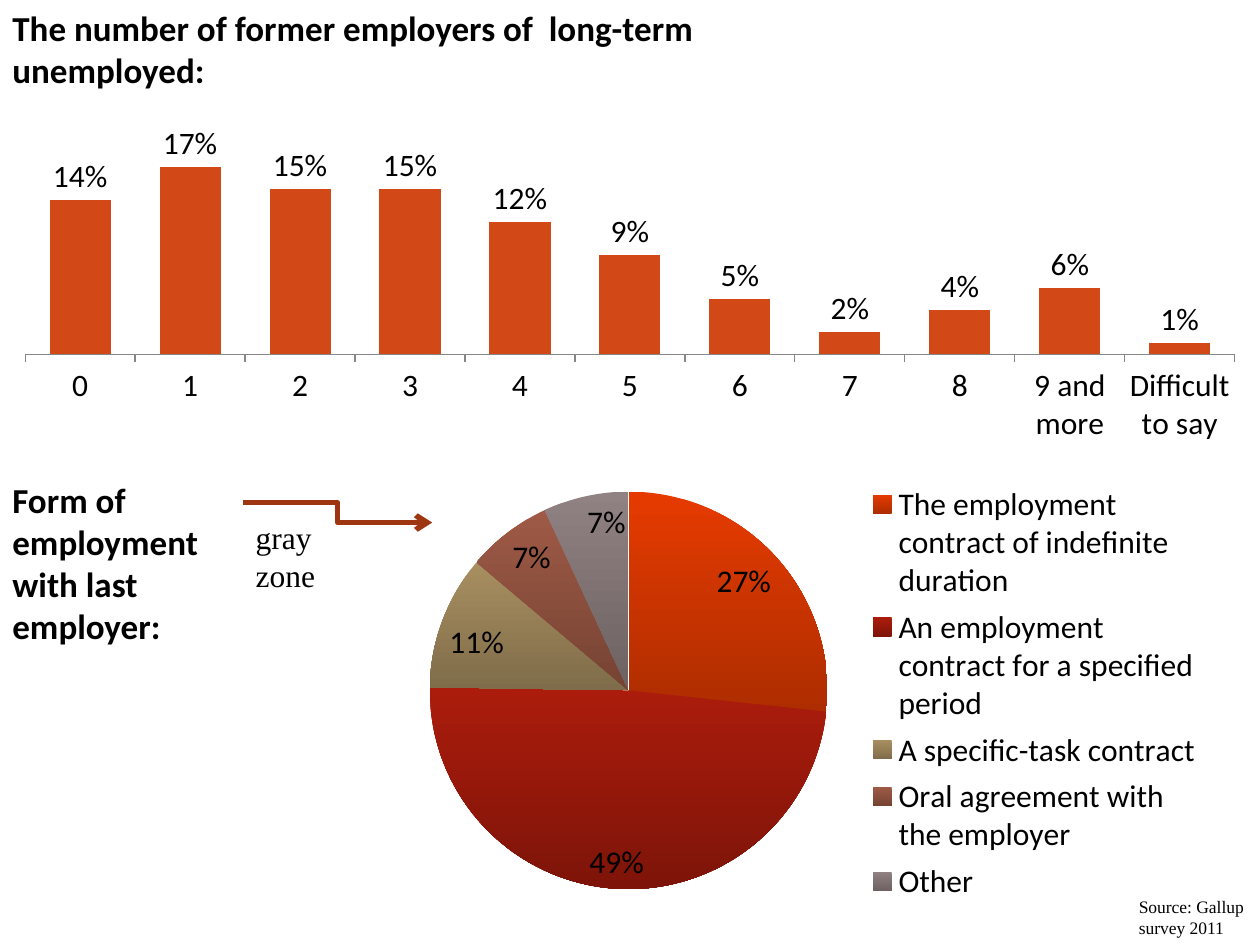
from dataclasses import dataclass

import pptx
import pptx.chart.data
import pptx.dml.color
import pptx.enum.chart
import pptx.enum.shapes
import pptx.enum.text
import pptx.oxml
import pptx.oxml.ns
import pptx.util
from pptx.util import Pt

qn = pptx.oxml.ns.qn


@dataclass(frozen=True)
class Theme:
    sans: str = "Calibri"
    serif: str = "Times New Roman"
    heading_size: int = 20
    body_size: int = 18
    source_size: int = 10
    text: str = "000000"
    column: str = "D34817"
    axis: str = "868686"
    arrow: str = "9E3611"
    # Top and bottom colour of each pie slice
    slices: tuple = (
        ("E63B00", "AE2D00"),
        ("AB1C0C", "7E1409"),
        ("A88F60", "7F6C4A"),
        ("9E5A46", "764333"),
        ("908182", "6D6162"),
    )


THEME = Theme()

EMPLOYER_COUNTS = {
    "0": 0.14, "1": 0.17, "2": 0.15, "3": 0.15, "4": 0.12, "5": 0.09,
    "6": 0.05, "7": 0.02, "8": 0.04, "9 and more": 0.06, "Difficult to say": 0.01,
}
CONTRACT_FORMS = {
    "The employment contract of indefinite duration": 27,
    "An employment contract for a specified period": 49,
    "A specific-task contract": 11,
    "Oral agreement with the employer": 7,
    "Other": 7,
}


def color(value):
    return pptx.dml.color.RGBColor.from_string(value)


def style_font(font, name, size, bold=False):
    font.name = name
    font.size = Pt(size)
    font.bold = bold
    font.color.rgb = color(THEME.text)


def add_text(slide, box, text, name, size, bold=False):
    shape = slide.shapes.add_textbox(*map(Pt, box))
    text_frame = shape.text_frame
    text_frame.word_wrap = True
    text_frame.auto_size = pptx.enum.text.MSO_AUTO_SIZE.SHAPE_TO_FIT_TEXT
    text_frame.text = text
    style_font(text_frame.paragraphs[0].runs[0].font, name, size, bold)


def place_manually(parent, index, fractions, inner=False):
    """Fix a chart part at x, y, width, height as fractions of the chart."""
    for old_layout in parent.findall(qn("c:layout")):
        parent.remove(old_layout)
    settings = [("layoutTarget", "inner")] if inner else []
    settings += [("xMode", "edge"), ("yMode", "edge")]
    settings += zip("xywh", fractions)
    parts = "".join(f'<c:{tag} val="{value}"/>' for tag, value in settings)
    namespace = pptx.oxml.ns.nsdecls("c")
    parent.insert(index, pptx.oxml.parse_xml(
        f"<c:layout {namespace}><c:manualLayout>{parts}</c:manualLayout></c:layout>"))


def add_chart(slide, box, chart_type, values, plot_area):
    chart_data = pptx.chart.data.CategoryChartData()
    chart_data.categories = list(values)
    chart_data.add_series("Series 1", list(values.values()))
    chart = slide.shapes.add_chart(chart_type, *map(Pt, box), chart_data).chart
    chart.has_title = False
    chart.has_legend = False
    style_font(chart.font, THEME.sans, THEME.body_size)
    plot = chart.plots[0]
    plot.has_data_labels = True
    plot.data_labels.number_format = "0%"
    plot.data_labels.number_format_is_linked = False
    place_manually(chart._chartSpace.find(".//" + qn("c:plotArea")), 0, plot_area, inner=True)
    return chart


def add_employer_chart(slide, box):
    chart = add_chart(slide, box, pptx.enum.chart.XL_CHART_TYPE.COLUMN_CLUSTERED,
                      EMPLOYER_COUNTS, (0.02, 0.02, 0.96, 0.7))
    plot = chart.plots[0]
    plot.gap_width = 80
    plot.vary_by_categories = False
    plot.data_labels.show_value = True
    plot.data_labels.position = pptx.enum.chart.XL_LABEL_POSITION.OUTSIDE_END
    fill = plot.series[0].format.fill
    fill.solid()
    fill.fore_color.rgb = color(THEME.column)

    value_axis = chart.value_axis
    value_axis.visible = False
    value_axis.has_major_gridlines = False
    value_axis.minimum_scale = 0
    value_axis.maximum_scale = 0.2
    category_axis = chart.category_axis
    category_axis.major_tick_mark = pptx.enum.chart.XL_TICK_MARK.OUTSIDE
    category_axis.format.line.color.rgb = color(THEME.axis)


def add_contract_chart(slide, box):
    chart = add_chart(slide, box, pptx.enum.chart.XL_CHART_TYPE.PIE,
                      CONTRACT_FORMS, (0.13, 0.12, 0.44, 0.84))
    plot = chart.plots[0]
    plot.vary_by_categories = True
    plot.data_labels.show_value = False
    plot.data_labels.show_percentage = True
    plot.data_labels.position = pptx.enum.chart.XL_LABEL_POSITION.INSIDE_END
    for index, stop_colors in enumerate(THEME.slices):
        slice_format = plot.series[0].points[index].format
        slice_format.line.fill.background()
        slice_format.fill.gradient()
        slice_format.fill.gradient_angle = 270
        for stop, value in zip(slice_format.fill.gradient_stops, stop_colors):
            stop.color.rgb = color(value)

    chart.has_legend = True
    chart.legend.position = pptx.enum.chart.XL_LEGEND_POSITION.RIGHT
    chart.legend.include_in_layout = False
    style_font(chart.legend.font, THEME.sans, THEME.body_size)
    place_manually(chart._chartSpace.find(".//" + qn("c:legend")), 1, (0.64, 0.09, 0.36, 0.91))


def add_gray_zone(slide, box):
    """Elbow arrow towards the pie with its caption below."""
    left, top, width, height = box
    connector = slide.shapes.add_connector(
        pptx.enum.shapes.MSO_CONNECTOR.ELBOW,
        Pt(left), Pt(top), Pt(left + width), Pt(top + 11.3))
    connector.line.color.rgb = color(THEME.arrow)
    connector.line.width = Pt(3)
    properties = connector._element.spPr
    line = properties.find(qn("a:ln"))
    line.append(line.makeelement(qn("a:tailEnd"), {"type": "arrow"}))
    properties.append(properties.makeelement(qn("a:effectLst"), {}))
    add_text(slide, (left, top + 5, 51, height - 5), "gray zone", THEME.serif, THEME.body_size)


def add_employers_region(slide, box):
    left, top, width, height = box
    add_text(slide, (left, top, 445, 55.5),
             "The number of former employers of  long-term unemployed:",
             THEME.sans, THEME.heading_size, bold=True)
    add_employer_chart(slide, (left, top + 71.3, width, height - 71.3))


def add_contracts_region(slide, box):
    left, top, width, height = box
    add_contract_chart(slide, (left + 178.5, top, 516.3, 272))
    add_text(slide, (left, top + 22.3, 127.5, 108),
             "Form of employment with last employer:",
             THEME.sans, THEME.heading_size, bold=True)
    add_gray_zone(slide, (left + 139, top + 39.6, 108, 56))
    add_text(slide, (left + width - 76.3, top + height - 31.7, 76.3, 31.7),
             "Source: Gallup survey 2011", THEME.serif, THEME.source_size)


def main():
    presentation = pptx.Presentation()
    presentation.slide_width = Pt(720)
    presentation.slide_height = Pt(540)
    slide = presentation.slides.add_slide(presentation.slide_layouts[6])
    add_employers_region(slide, (0, 0, 720, 252.7))
    add_contracts_region(slide, (0, 247.7, 720, 292.3))
    presentation.save("out.pptx")


if __name__ == "__main__":
    main()
